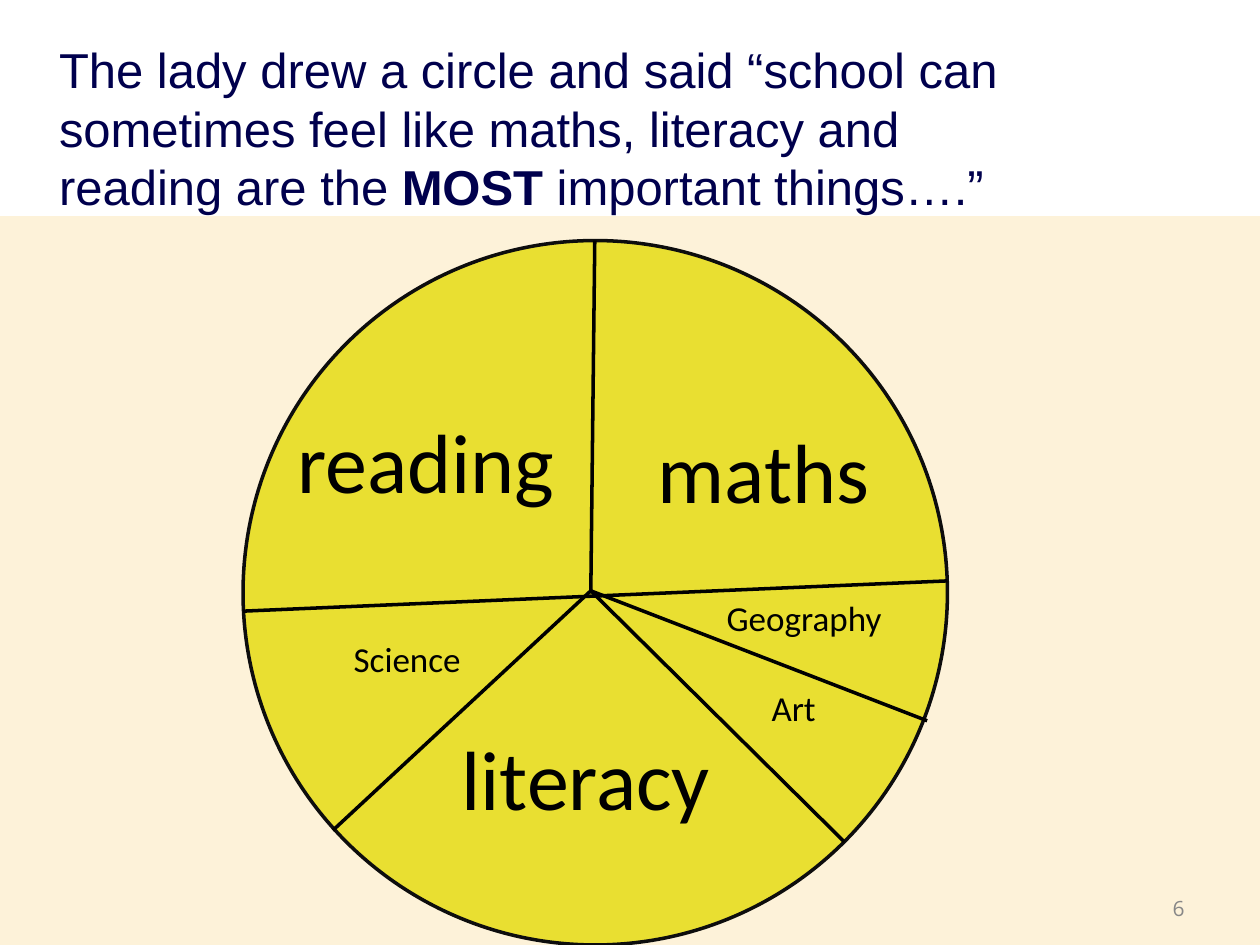
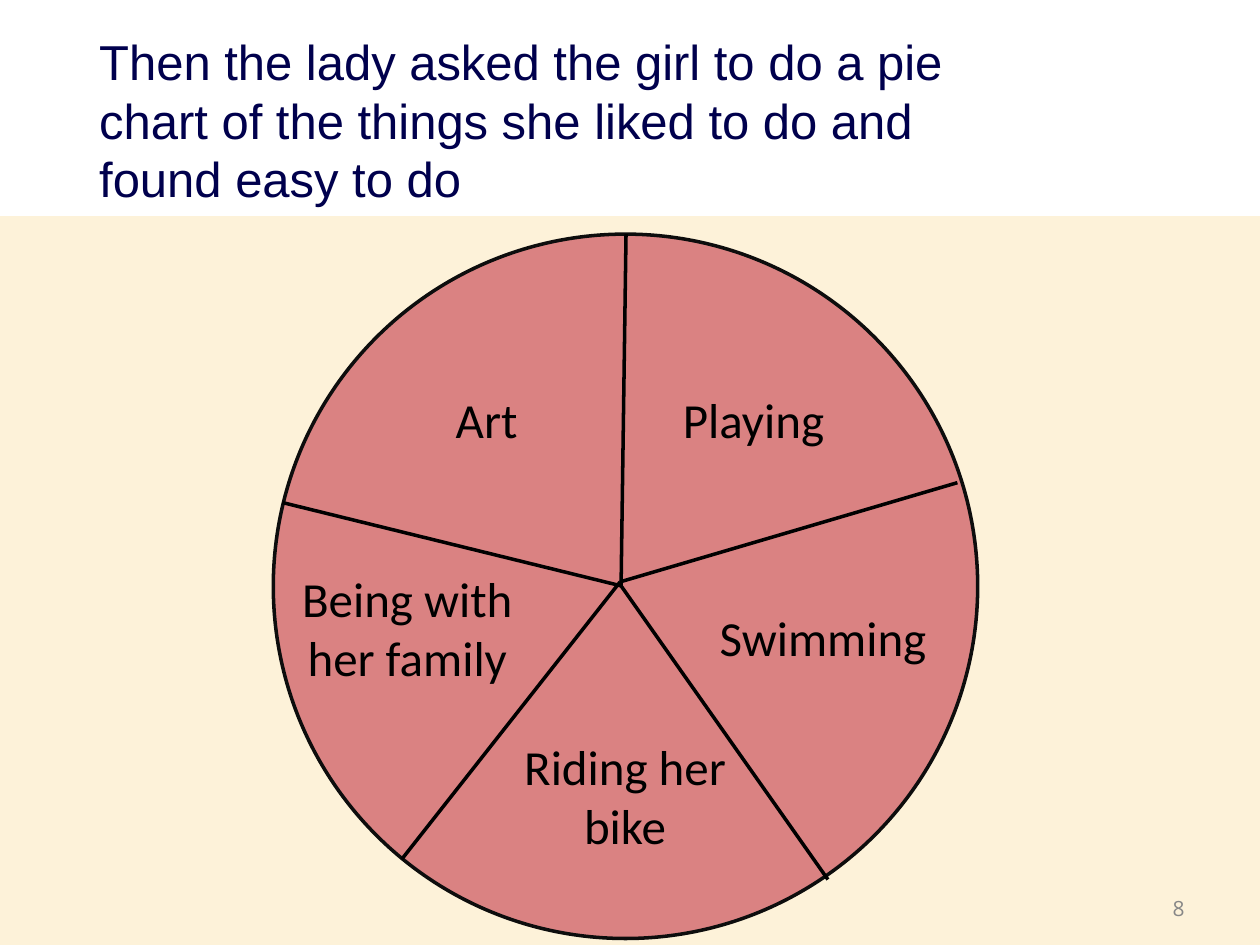
"""Builds two slides with hand-divided circles about school subjects and favourite activities."""
import pptx
import pptx.util
import pptx.dml.color
import pptx.enum.shapes
import pptx.enum.text
import lxml.etree

Cm, Pt = pptx.util.Cm, pptx.util.Pt
RGBColor = pptx.dml.color.RGBColor
PP_ALIGN, MSO_ANCHOR = pptx.enum.text.PP_ALIGN, pptx.enum.text.MSO_ANCHOR
MSO_SHAPE = pptx.enum.shapes.MSO_SHAPE

CREAM = RGBColor(0xFD, 0xF2, 0xD9)
WHITE = RGBColor(0xFF, 0xFF, 0xFF)
NAVY = RGBColor(0x00, 0x00, 0x4D)
GREY = RGBColor(0x87, 0x87, 0x87)
BLACK = RGBColor(0x00, 0x00, 0x00)
RIM = RGBColor(0x0D, 0x0D, 0x0D)
YELLOW = RGBColor(0xE9, 0xDF, 0x31)
ROSE = RGBColor(0xDA, 0x82, 0x82)

DIAMETER = 14.2
LABEL_WIDTH = 6.2
SCHOOL_HUB = (11.91, 11.91)
LIKES_HUB = (12.52, 11.81)
LIKES_HUB_TOP = (12.5, 11.73)

circles = [
    {
        "title": ["The lady drew a circle and said “school can sometimes feel like maths, "
                  "literacy and reading are the ", "MOST", " important things….”"],
        "title_box": (1.09, 0.97, 19.61, 3.2),
        "number": "6",
        "corner": (4.9, 4.85),
        "colour": YELLOW,
        "dividers": [
            ((11.99, 4.85), SCHOOL_HUB),
            ((17.02, 16.97), SCHOOL_HUB),
            ((6.71, 16.74), SCHOOL_HUB),
            ((4.9, 12.32), (19.1, 11.71)),
            ((18.69, 14.53), SCHOOL_HUB),
        ],
        "labels": [
            ("maths", 48, 1, 12.29, 8.33),
            ("literacy", 48, 1, 8.71, 14.53),
            ("reading", 48, 1, 5.49, 8.13),
            ("Science", 20, 1, 5.11, 12.73),
            ("Geography", 20, 1, 13.11, 11.91),
            ("Art", 20, 1, 12.9, 13.72),
        ],
    },
    {
        "title": ["Then the lady asked the girl to do a pie chart of the things "
                  "she liked to do and found easy to do"],
        "title_box": (1.9, 0.91, 18.19, 3),
        "number": "8",
        "corner": (5.51, 4.72),
        "colour": ROSE,
        "dividers": [
            ((12.62, 4.72), LIKES_HUB),
            ((16.69, 17.73), LIKES_HUB),
            ((5.69, 10.13), LIKES_HUB),
            ((8.1, 17.32), LIKES_HUB_TOP),
            ((19.3, 9.73), LIKES_HUB_TOP),
        ],
        "labels": [
            ("Playing", 28, 1, 12.09, 7.72),
            ("Being with her family", 28, 2, 5.11, 11.33),
            ("Art", 28, 1, 6.71, 7.72),
            ("Riding her bike", 28, 2, 9.5, 14.73),
            ("Swimming", 28, 1, 13.49, 12.12),
        ],
    },
]


def add_filled(slide, preset, box, fill, line):
    shape = slide.shapes.add_shape(preset, *[Cm(length) for length in box])
    shape.shadow.inherit = False
    shape.fill.solid()
    shape.fill.fore_color.rgb = fill
    shape.line.color.rgb = line
    shape.line.width = Pt(2)
    return shape


def add_text(slide, box, text, font_name, size, colour, alignment):
    textbox = slide.shapes.add_textbox(*[Cm(length) for length in box])
    paragraph = textbox.text_frame.paragraphs[0]
    paragraph.text = text
    paragraph.alignment = alignment
    paragraph.font.name = font_name
    paragraph.font.size = Pt(size)
    paragraph.font.color.rgb = colour
    return textbox.text_frame


deck = pptx.Presentation()
deck.slide_width, deck.slide_height = Cm(25.4), Cm(19.05)
layout = deck.slide_layouts.get_by_name("Title Only")
layout.background.fill.solid()
layout.background.fill.fore_color.rgb = CREAM

for circle in circles:
    slide = deck.slides.add_slide(layout)

    header = add_filled(slide, MSO_SHAPE.RECTANGLE, (0, 0, 25.4, 4.32), WHITE, WHITE)
    slide.shapes.element.insert(2, header.element)

    title = slide.shapes.title
    title.left, title.top, title.width, title.height = [Cm(length) for length in circle["title_box"]]
    frame = title.text_frame
    frame.auto_size = pptx.enum.text.MSO_AUTO_SIZE.NONE
    frame.word_wrap = True
    frame.vertical_anchor = MSO_ANCHOR.MIDDLE
    frame.margin_left = frame.margin_right = frame.margin_top = frame.margin_bottom = Cm(0.1)
    sentence = frame.paragraphs[0]
    sentence.alignment = PP_ALIGN.LEFT
    sentence.font.name = "Arial"
    sentence.font.size = Pt(28)
    sentence.font.color.rgb = NAVY
    for words in circle["title"]:
        run = sentence.add_run()
        run.text = words
        run.font.bold = words == "MOST"

    number = add_text(slide, (23.34, 17.93, 0.79, 0.74), circle["number"],
                      "Open Sans", 12, GREY, PP_ALIGN.RIGHT)
    number.word_wrap = False
    number.vertical_anchor = MSO_ANCHOR.MIDDLE

    add_filled(slide, MSO_SHAPE.OVAL, (*circle["corner"], DIAMETER, DIAMETER), circle["colour"], RIM)

    for start, end in circle["dividers"]:
        divider = slide.shapes.add_connector(pptx.enum.shapes.MSO_CONNECTOR.STRAIGHT,
                                             *[Cm(length) for length in start + end])
        divider.line.color.rgb = BLACK
        divider.line.width = Pt(2)
        lxml.etree.SubElement(divider.element.spPr, pptx.oxml.ns.qn("a:effectLst"))

    for text, size, lines, left, top in circle["labels"]:
        height = round(0.25 + lines * size * 0.0425, 2)
        label = add_text(slide, (left, top, LABEL_WIDTH, height), text,
                         "Calibri", size, BLACK, PP_ALIGN.CENTER)
        label.word_wrap = True
        label.auto_size = pptx.enum.text.MSO_AUTO_SIZE.SHAPE_TO_FIT_TEXT

deck.save("out.pptx")
